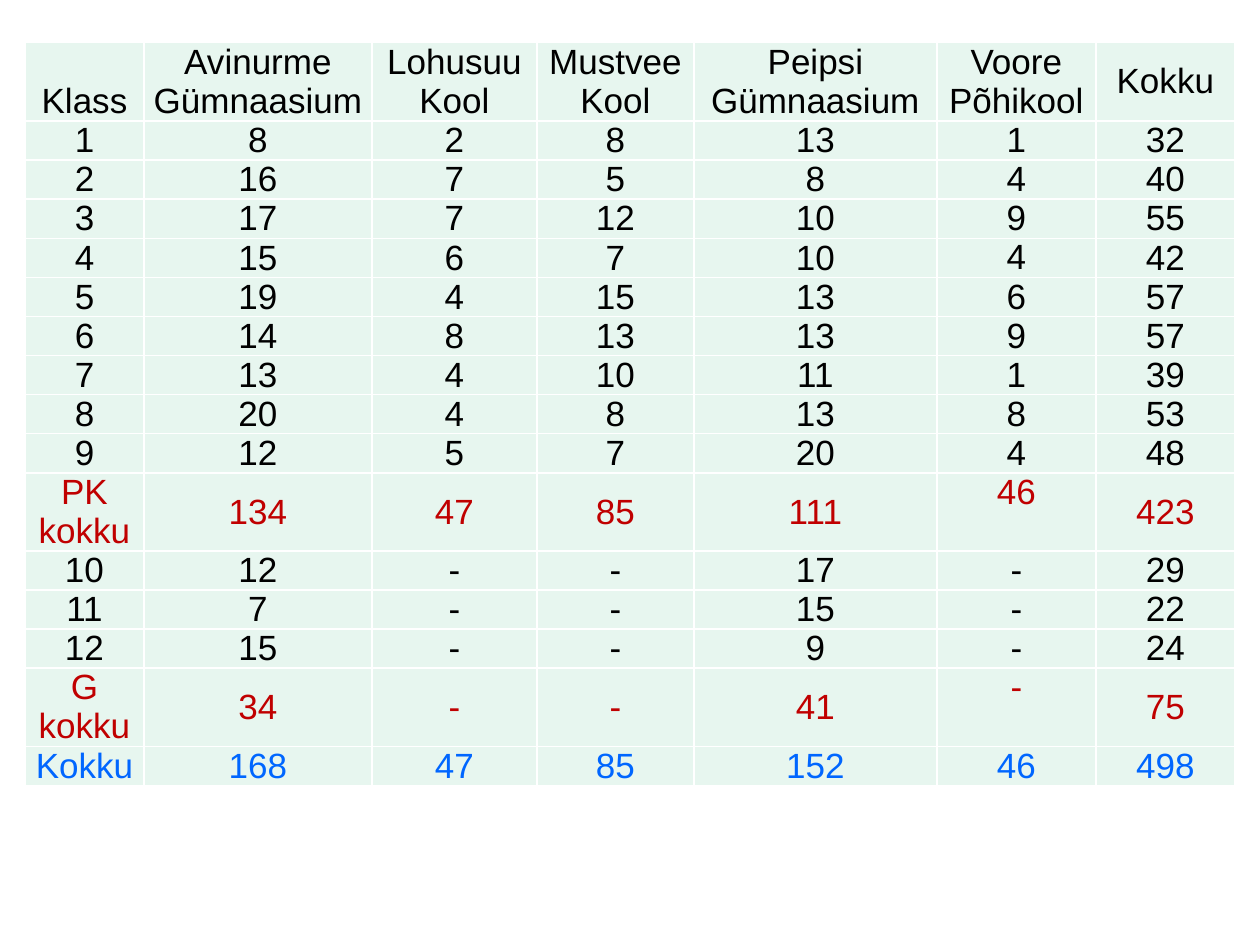
from lxml import etree
from pptx import Presentation
from pptx import util as u
from pptx.dml.color import RGBColor
from pptx.enum import text
from pptx.oxml import ns

PX = u.Inches(1) // 126
BLACK = RGBColor(0x00, 0x00, 0x00)
RED = RGBColor(0xC0, 0x00, 0x00)
BLUE = RGBColor(0x00, 0x66, 0xFF)
MINT = RGBColor(0xE7, 0xF6, 0xEF)
BORDER = "FFFFFF"

COL_WIDTHS = [119, 228, 165, 157, 243, 159, 139]
HEADER_H, ROW_H, LAST_H = 79, 39, 8  # rows grow to fit their text
VOORE = 5

HEADER = ["Klass", "Avinurme\nGümnaasium", "Lohusuu Kool", "Mustvee Kool",
          "Peipsi Gümnaasium", "Voore Põhikool", "Kokku"]
BODY = [
    ["1", "8", "2", "8", "13", "1", "32"],
    ["2", "16", "7", "5", "8", "4", "40"],
    ["3", "17", "7", "12", "10", "9", "55"],
    ["4", "15", "6", "7", "10", "4", "42"],
    ["5", "19", "4", "15", "13", "6", "57"],
    ["6", "14", "8", "13", "13", "9", "57"],
    ["7", "13", "4", "10", "11", "1", "39"],
    ["8", "20", "4", "8", "13", "8", "53"],
    ["9", "12", "5", "7", "20", "4", "48"],
    ["PK kokku", "134", "47", "85", "111", "46", "423"],
    ["10", "12", "-", "-", "17", "-", "29"],
    ["11", "7", "-", "-", "15", "-", "22"],
    ["12", "15", "-", "-", "9", "-", "24"],
    ["G kokku", "34", "-", "-", "41", "-", "75"],
    ["Kokku", "168", "47", "85", "152", "46", "498"],
]
ROW_COLORS = {"PK kokku": RED, "G kokku": RED, "Kokku": BLUE}
CELL_FORMAT = {"margin_left": 9 * PX, "margin_right": 9 * PX,
               "margin_top": 0, "margin_bottom": 0}


def add_borders(cell):
    tcPr = cell._tc.get_or_add_tcPr()
    for i, side in enumerate(("lnL", "lnR", "lnT", "lnB")):
        ln = etree.Element(ns.qn(f"a:{side}"), w=str(u.Pt(1)))
        fill = etree.SubElement(ln, ns.qn("a:solidFill"))
        etree.SubElement(fill, ns.qn("a:srgbClr"), val=BORDER)
        tcPr.insert(i, ln)


prs = Presentation()
prs.slide_width, prs.slide_height = 1260 * PX, 945 * PX
s = prs.slides.add_slide(prs.slide_layouts[6])

rows = [HEADER] + BODY
heights = [HEADER_H] + [ROW_H] * (len(BODY) - 1) + [LAST_H]
frame = s.shapes.add_table(len(rows), len(HEADER), 25 * PX, 42 * PX,
                           sum(COL_WIDTHS) * PX, sum(heights) * PX)
table = frame.table
for col, width in zip(table.columns, COL_WIDTHS):
    col.width = width * PX
for row, height in zip(table.rows, heights):
    row.height = height * PX
frame.height = 798 * PX

for r, values in enumerate(rows):
    color = ROW_COLORS.get(values[0], BLACK)
    for c, value in enumerate(values):
        cell = table.cell(r, c)
        cell.text = value
        for name, setting in CELL_FORMAT.items():
            setattr(cell, name, setting)
        cell.vertical_anchor = text.MSO_ANCHOR.MIDDLE
        if r == 0 and c == 0:
            cell.vertical_anchor = text.MSO_ANCHOR.BOTTOM
        elif r > 0 and c == VOORE:
            cell.vertical_anchor = text.MSO_ANCHOR.TOP
        cell.fill.solid()
        cell.fill.fore_color.rgb = MINT
        add_borders(cell)
        for p in cell.text_frame.paragraphs:
            p.alignment = text.PP_ALIGN.CENTER
            font = p.runs[0].font
            for name, setting in {"name": "Arial", "size": u.Pt(20), "bold": False}.items():
                setattr(font, name, setting)
            font.color.rgb = color

prs.save("out.pptx")
